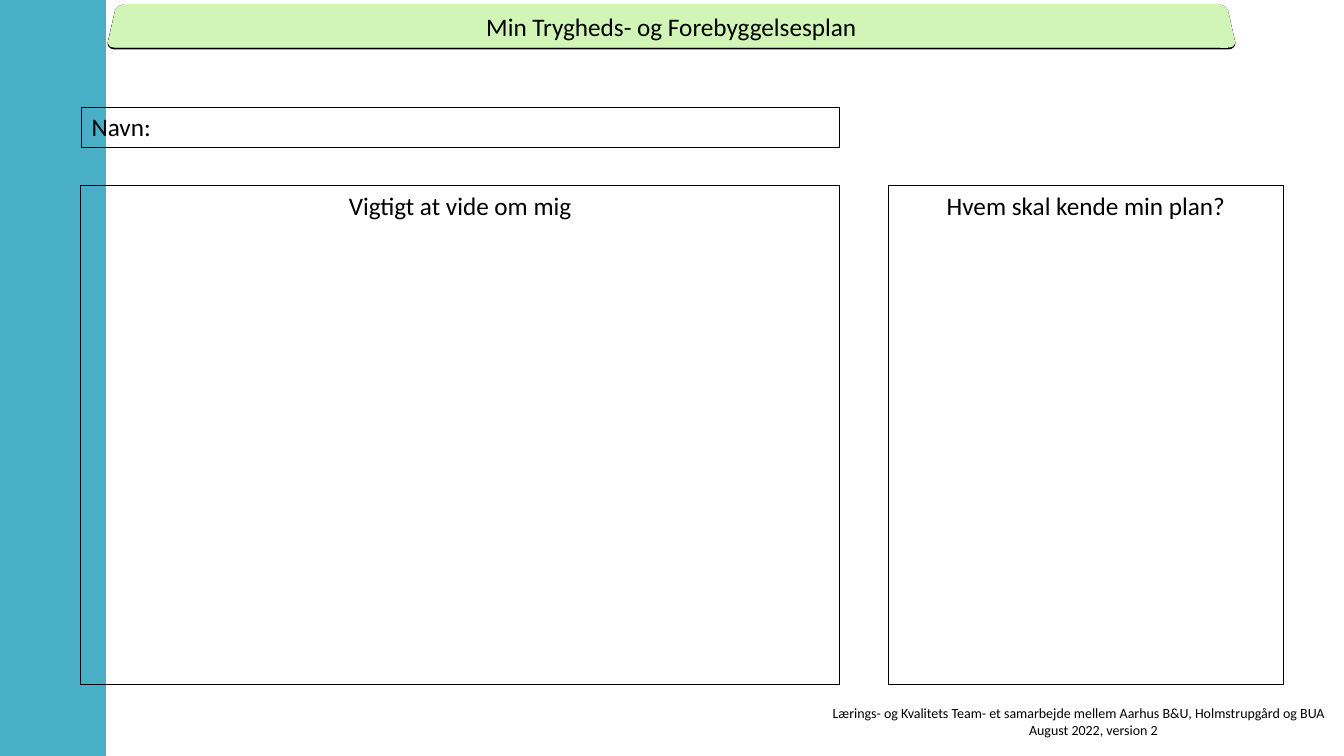
from lxml import etree
from pptx import Presentation
from pptx.dml.color import RGBColor
from pptx.enum.shapes import MSO_SHAPE as Shape
from pptx.enum.text import MSO_ANCHOR as Anchor, PP_ALIGN as Align
from pptx.util import Inches, Pt

WIDTH, HEIGHT = 13.33, 7.5
BLACK, BLUE, GREEN = "000000", "49AFC6", "A9D18E"
DRAWING = "http://schemas.openxmlformats.org/drawingml/2006/main"
SHADOW = f"""<a:effectLst xmlns:a="{DRAWING}">
  <a:outerShdw blurRad="107950" dist="12700" dir="5400000" algn="ctr">
    <a:srgbClr val="{BLACK}"/>
  </a:outerShdw>
</a:effectLst>"""
TILT = f"""<a:scene3d xmlns:a="{DRAWING}">
  <a:camera prst="perspectiveRelaxedModerately"/>
  <a:lightRig rig="soft" dir="t"/>
</a:scene3d>"""


def color(value):
    return RGBColor.from_string(value)


def write(shape, lines, aligns, size=18, anchor=Anchor.TOP):
    frame = shape.text_frame
    frame.word_wrap = True
    frame.vertical_anchor = anchor
    frame.text = "\n".join(lines)
    for para, align in zip(frame.paragraphs, aligns):
        para.alignment = align
        para.font.size = Pt(size)
        para.font.name = "Calibri"
        para.font.color.rgb = color(BLACK)


def add_box(page, box, kind=Shape.RECTANGLE, fill=None, line=None):
    """Add a shape at box; line is the outline width in points."""
    shape = page.shapes.add_shape(kind, *map(Inches, box))
    shape.shadow.inherit = False
    if fill:
        shape.fill.solid()
        shape.fill.fore_color.rgb = color(fill)
    else:
        shape.fill.background()
    if line:
        shape.line.color.rgb = color(BLACK)
        shape.line.width = Pt(line)
    else:
        shape.line.fill.background()
    return shape


def add_header(page, box, title):
    """Add the green title bar, tilted backwards over a shadow."""
    bar = add_box(page, box, Shape.ROUNDED_RECTANGLE, fill=GREEN)
    write(bar, [title], [Align.CENTER], anchor=Anchor.MIDDLE)
    properties = bar.element.spPr
    properties.remove(properties.find(f"{{{DRAWING}}}effectLst"))
    for effect in (SHADOW, TILT):
        properties.append(etree.fromstring(effect))


def add_field(page, box, label, align=Align.CENTER, line=0.75):
    write(add_box(page, box, line=line), [label], [align])


def add_footer(page, box, lines):
    footer = page.shapes.add_textbox(*map(Inches, box))
    write(footer, lines, [Align.LEFT, Align.CENTER], size=10)


def build_plan(page):
    add_box(page, (0, 0, 1.05, HEIGHT), fill=BLUE)
    add_footer(page, (8.16, 6.94, 5.37, 0.44), [
        "Lærings- og Kvalitets Team- et samarbejde mellem Aarhus B&U, Holmstrupgård og BUA",
        "August 2022, version 2",
    ])
    add_header(page, (1.11, 0, 11.1, 0.52), "Min Trygheds- og Forebyggelsesplan")
    top, height = 1.84, 4.95
    add_field(page, (8.81, top, 3.92, height), "Hvem skal kende min plan?")
    add_field(page, (0.8, top, 7.53, height), "Vigtigt at vide om mig")
    add_field(page, (0.81, 1.06, 7.51, 0.4), "Navn:", Align.LEFT, 0.25)


def main():
    deck = Presentation()
    deck.slide_width, deck.slide_height = Inches(WIDTH), Inches(HEIGHT)
    build_plan(deck.slides.add_slide(deck.slide_layouts[6]))
    deck.save("out.pptx")


if __name__ == "__main__":
    main()
